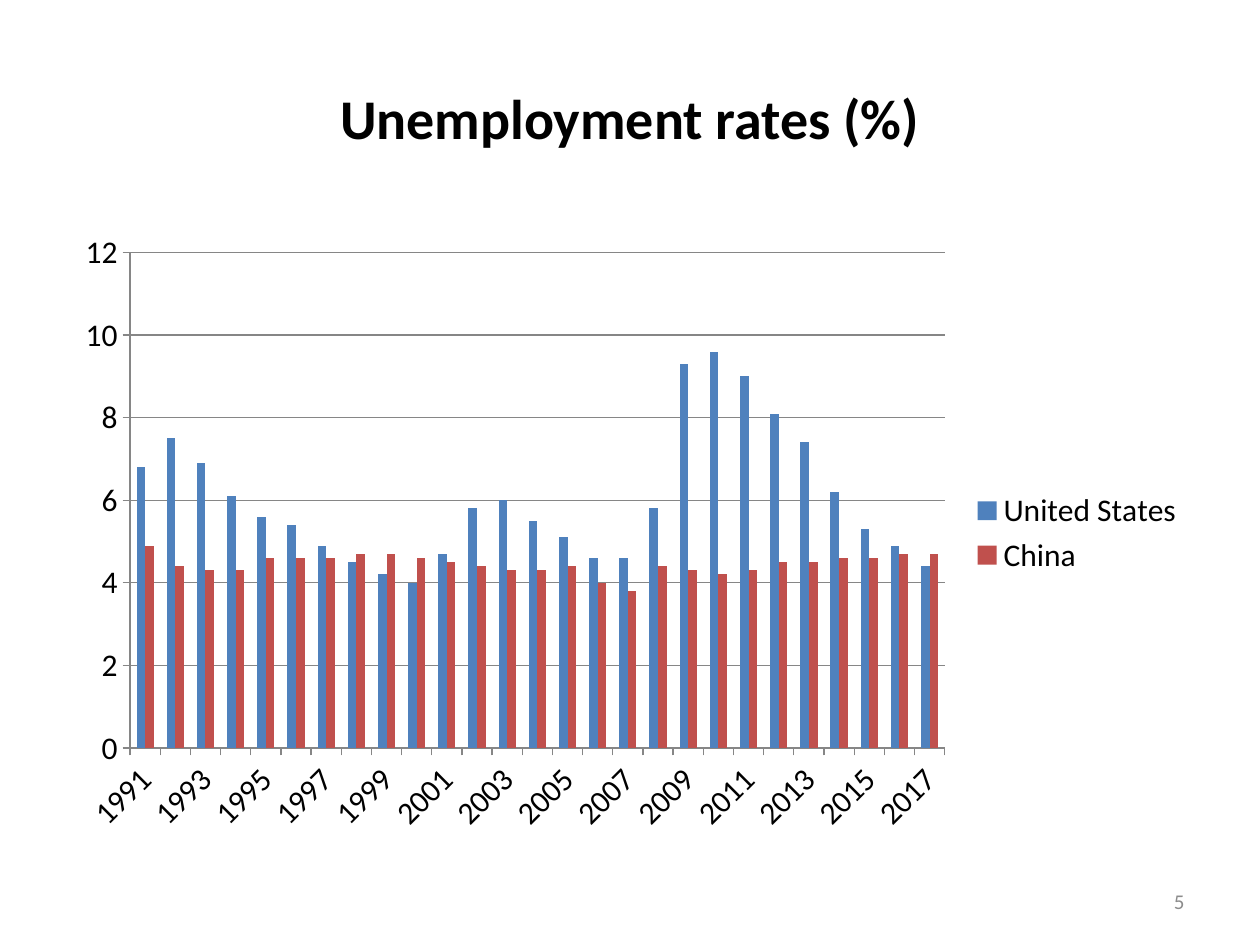
from dataclasses import dataclass

from pptx import Presentation
from pptx.chart.data import CategoryChartData
from pptx.dml.color import RGBColor
from pptx.enum.chart import XL_CHART_TYPE, XL_LEGEND_POSITION, XL_TICK_MARK
from pptx.enum.text import MSO_ANCHOR, PP_ALIGN
from pptx.util import Pt

COLUMNS = XL_CHART_TYPE.COLUMN_CLUSTERED
LEGEND_RIGHT = XL_LEGEND_POSITION.RIGHT
TICK_OUT = XL_TICK_MARK.OUTSIDE
MIDDLE = MSO_ANCHOR.MIDDLE
CENTER = PP_ALIGN.CENTER
RIGHT = PP_ALIGN.RIGHT

PX = 914400 // 126
FONT = "Calibri"
COLORS = {
    "text": "000000",
    "number": "8C8C8C",
    "axis": "868686",
    "us": "4F81BD",
    "china": "C0504D",
}


@dataclass
class Box:
    x: int
    y: int
    w: int
    h: int

    def emu(self) -> tuple[int, int, int, int]:
        return self.x * PX, self.y * PX, self.w * PX, self.h * PX


@dataclass
class Series:
    name: str
    color: str
    values: list[float]


YEARS = [str(year) for year in range(1991, 2018)]
SERIES = [
    Series("United States", "us", [
        6.8, 7.5, 6.9, 6.1, 5.6, 5.4, 4.9, 4.5, 4.2, 4, 4.7, 5.8, 6, 5.5,
        5.1, 4.6, 4.6, 5.8, 9.3, 9.6, 9, 8.1, 7.4, 6.2, 5.3, 4.9, 4.4]),
    Series("China", "china", [
        4.9, 4.4, 4.3, 4.3, 4.6, 4.6, 4.6, 4.7, 4.7, 4.6, 4.5, 4.4, 4.3, 4.3,
        4.4, 4, 3.8, 4.4, 4.3, 4.2, 4.3, 4.5, 4.5, 4.6, 4.6, 4.7, 4.7]),
]


def rgb(name: str) -> RGBColor:
    return RGBColor.from_string(COLORS[name])


def style_font(font, size: int, color: str, bold: bool = False) -> None:
    font.name = FONT
    font.size = Pt(size)
    font.bold = bold
    font.color.rgb = rgb(color)


def write_text(sp, text: str, size: int, color: str, align, bold: bool = False) -> None:
    tf = sp.text_frame
    tf.word_wrap = True
    tf.vertical_anchor = MIDDLE
    p = tf.paragraphs[0]
    p.alignment = align
    r = p.add_run()
    r.text = text
    style_font(r.font, size, color, bold)


def style_line(line) -> None:
    line.color.rgb = rgb("axis")
    line.width = Pt(0.75)


def add_rates_chart(s, box: Box) -> None:
    data = CategoryChartData()
    data.categories = YEARS
    for series in SERIES:
        data.add_series(series.name, series.values)
    chart = s.shapes.add_chart(COLUMNS, *box.emu(), data).chart
    chart.has_title = False
    style_font(chart.font, 18, "text")
    chart.has_legend = True
    chart.legend.position = LEGEND_RIGHT
    chart.legend.include_in_layout = False

    plot = chart.plots[0]
    plot.gap_width = 150
    plot.overlap = 0
    plot.vary_by_categories = False
    for bars, series in zip(plot.series, SERIES):
        bars.format.fill.solid()
        bars.format.fill.fore_color.rgb = rgb(series.color)

    for axis in (chart.category_axis, chart.value_axis):
        axis.major_tick_mark = TICK_OUT
        style_line(axis.format.line)
    values = chart.value_axis
    values.minimum_scale = 0
    values.maximum_scale = 12
    values.major_unit = 2
    values.has_major_gridlines = True
    style_line(values.major_gridlines.format.line)


def main() -> None:
    prs = Presentation()
    prs.slide_width = 1260 * PX
    prs.slide_height = 945 * PX
    s = prs.slides.add_slide(prs.slide_layouts[5])

    title = s.shapes.title
    title.left, title.top, title.width, title.height = Box(63, 38, 1134, 158).emu()
    write_text(title, "Unemployment rates (%)", 32, "text", CENTER, bold=True)

    add_rates_chart(s, Box(63, 221, 1134, 624))

    number = s.shapes.add_textbox(*Box(903, 876, 294, 50).emu())
    write_text(number, "5", 12, "number", RIGHT)

    prs.save("out.pptx")


if __name__ == "__main__":
    main()
